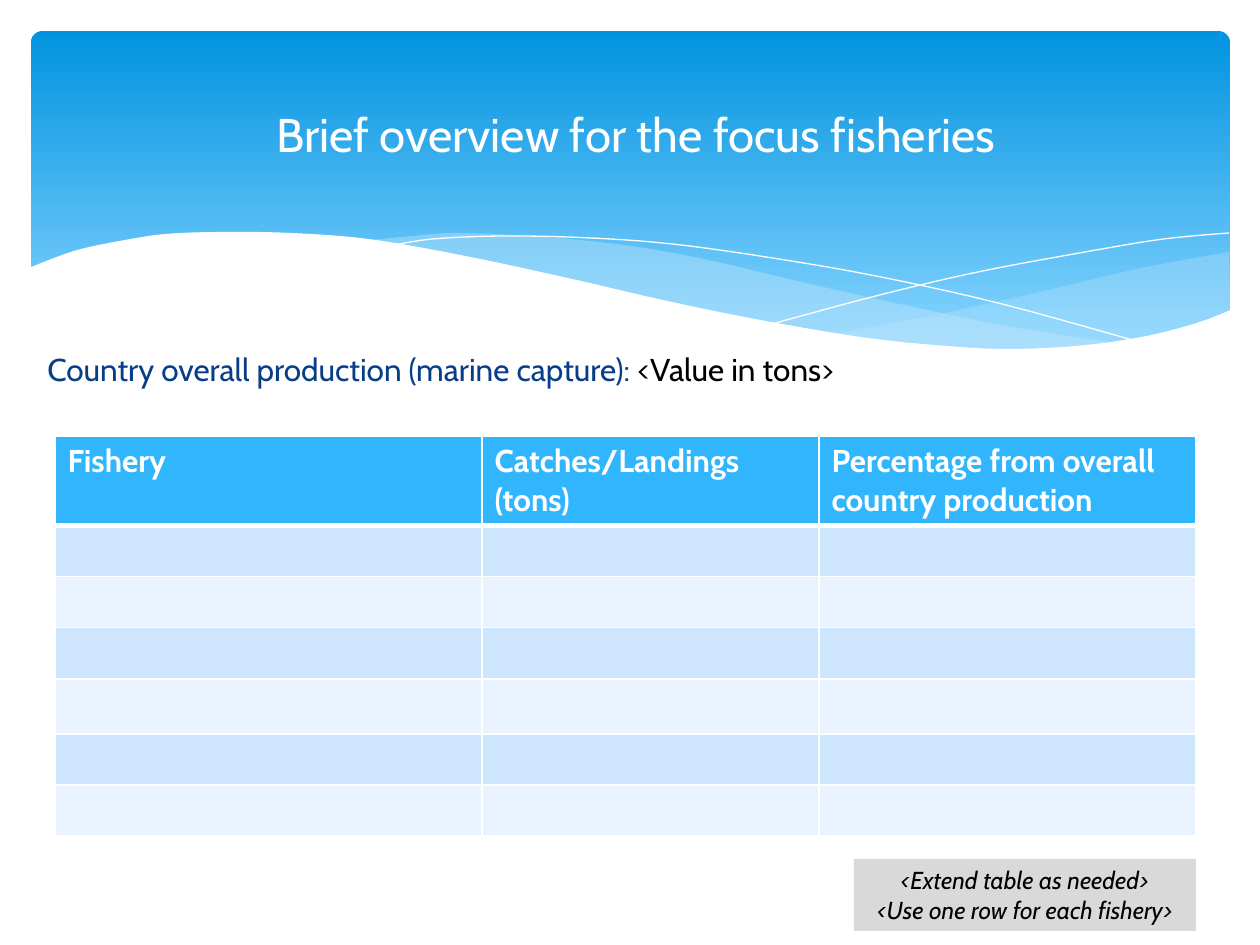
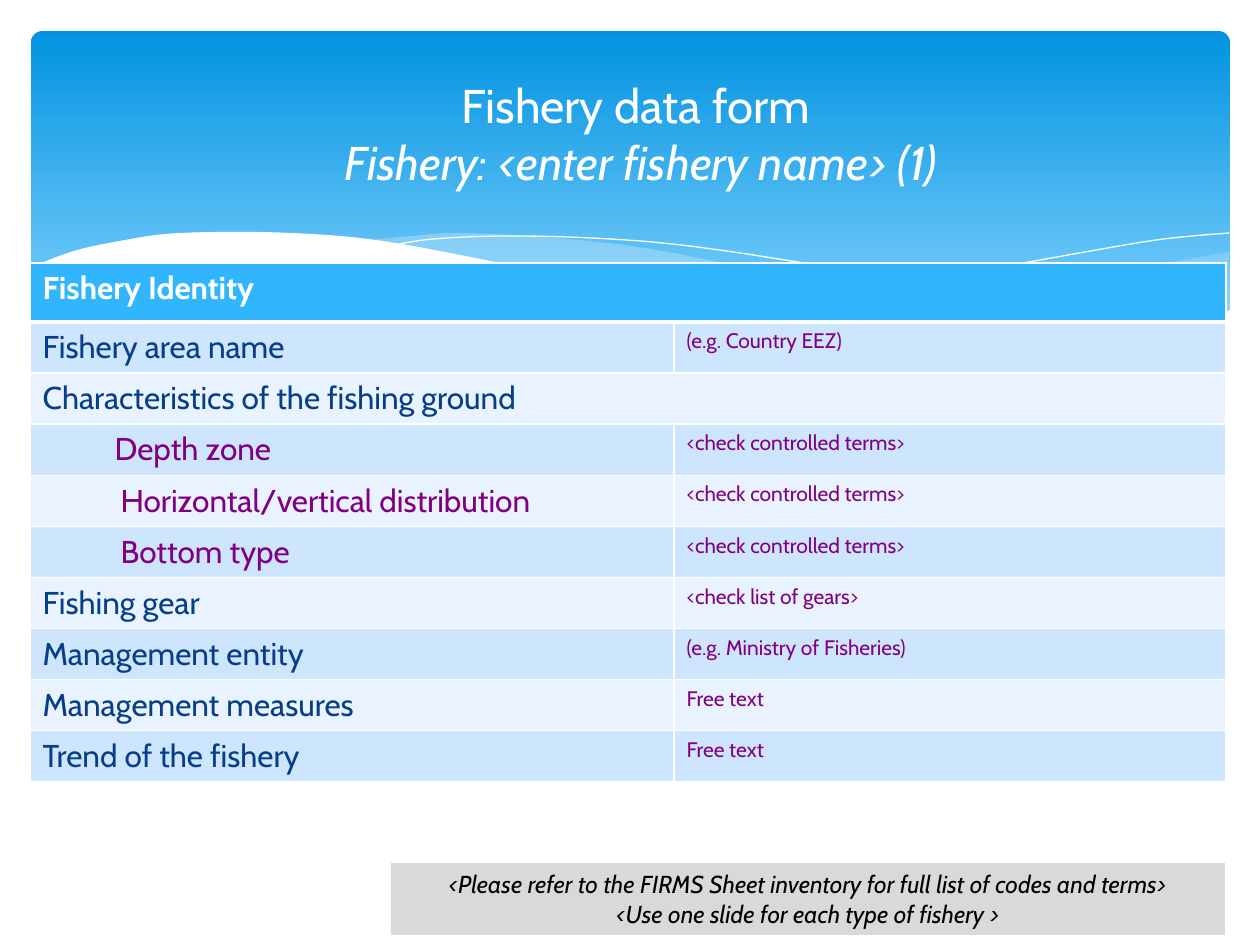
from lxml import etree
from pptx import Presentation
from pptx.dml.color import RGBColor
from pptx.enum.shapes import MSO_SHAPE
from pptx.enum.text import MSO_ANCHOR, MSO_AUTO_SIZE, PP_ALIGN
from pptx.oxml.ns import qn
from pptx.util import Inches, Pt

ROUNDED, RECTANGLE = MSO_SHAPE.ROUNDED_RECTANGLE, MSO_SHAPE.RECTANGLE
LEFT, CENTER = PP_ALIGN.LEFT, PP_ALIGN.CENTER
TOP, MIDDLE = MSO_ANCHOR.TOP, MSO_ANCHOR.MIDDLE
NO_FIT = MSO_AUTO_SIZE.NONE
PX = Inches(1) / 126
TITLE_ONLY = 5

THEME = {
    "font": "Cabin",
    "colors": {
        "white": "FFFFFF", "black": "000000", "navy": "073E87", "purple": "800080",
        "sky_top": "0293E0", "sky_bottom": "83D3FE", "wash": "C6E7FC",
        "header": "31B6FD", "band_dark": "CEE5FE", "band_light": "E8F3FF",
        "note": "D9D9D9",
    },
    # name: (colour, font settings)
    "text": {
        "title": ("white", {"size": Pt(27)}),
        "title_italic": ("white", {"size": Pt(27), "italic": True}),
        "label": ("navy", {"size": Pt(18)}),
        "value": ("black", {"size": Pt(18)}),
        "sub_label": ("purple", {"size": Pt(18)}),
        "hint": ("purple", {"size": Pt(12)}),
        "header": ("white", {"size": Pt(18), "bold": True}),
        "note": ("black", {"size": Pt(14), "italic": True}),
    },
}

# Shared band: every shape is a list of edges, each edge a smooth run of points
BAND_BOX = (31, 31, 1199, 340)
TITLE_BOX = (35, 47, 1201, 173)
RIGHT_WASH = [
    [(1229, 252), (1178, 261), (1123, 272), (1048, 290), (949, 312), (833, 334)],
    [(833, 334), (922, 345), (1012, 350), (1087, 346), (1150, 336), (1196, 324),
     (1230, 311)],
]
MIDDLE_WASH = [
    [(360, 241), (413, 236), (455, 233), (529, 236), (616, 244), (699, 258),
     (793, 280), (890, 302), (1017, 328), (1125, 344)],
    [(1125, 344), (1068, 349), (1003, 350), (927, 346), (838, 335), (736, 318),
     (619, 292), (538, 272), (456, 256), (360, 241)],
]
FALLING_LINE = [
    [(389, 246), (433, 239), (505, 236), (591, 238), (672, 244), (766, 257),
     (876, 276), (1002, 304), (1143, 343)],
]
RISING_LINE = [
    [(772, 324), (876, 296), (978, 272), (1091, 251), (1164, 239), (1229, 233)],
]
WHITE_WAVE = [
    [(29, 268), (74, 251), (120, 241), (166, 234), (223, 232), (290, 233),
     (368, 239), (460, 255), (563, 277), (667, 301), (760, 320), (867, 338),
     (959, 347), (1019, 349), (1087, 345), (1147, 336), (1197, 323), (1231, 310)],
    [(1231, 310), (1231, 415)],
    [(1231, 415), (29, 415)],
]

# Slide content
BREAK = ("\n", None)
OVERVIEW = {
    "title": [("Brief overview for the focus fisheries", "title")],
    "production_box": (35, 344, 1181, 165),
    "production": [("Country overall production (marine capture): ", "label"),
                   ("<Value in tons>", "value")],
    "note_box": (854, 859, 342, 72),
    "note": ["<Extend table as needed>", "<Use one row for each fishery>"],
    "table": {
        "corner": (55, 436),
        "columns": [427, 337, 377],
        "heights": [87, 50, 50, 50, 55, 50, 50],
        "rows": [["Fishery", "Catches/Landings (tons)",
                  "Percentage from overall country production"]]
                + [["", "", ""]] * 6,
    },
}
CHECK_TERMS = "<check controlled terms>"
DATA_FORM = {
    "title": [("Fishery data form", "title"), BREAK,
              (" Fishery: <enter fishery name> (1)", "title_italic")],
    "note_box": (391, 863, 834, 72),
    "note": ["<Please refer to the FIRMS Sheet inventory for full list of codes and terms>",
             "<Use one slide for each type of fishery >"],
    "table": {
        "corner": (30, 263),
        "columns": [644, 552],
        "heights": [59] + [51] * 9,
        # a row with one entry spans the table
        "rows": [
            ["Fishery Identity"],
            ["Fishery area name", "(e.g. Country EEZ)"],
            ["Characteristics of the fishing ground"],
            ["Depth zone", CHECK_TERMS],
            ["Horizontal/vertical distribution", CHECK_TERMS],
            ["Bottom type", CHECK_TERMS],
            ["Fishing gear", "<check list of gears>"],
            ["Management entity", "(e.g. Ministry of Fisheries)"],
            ["Management measures", "Free text"],
            ["Trend of the fishery", "Free text"],
        ],
        "indents": {3: 72, 4: 78, 5: 78},
    },
}


def emu(length):
    return round(length * PX)


def place(box):
    return [emu(length) for length in box]


def color(name):
    return RGBColor.from_string(THEME["colors"][name])


def paint(target, name):
    target.fill.solid()
    target.fill.fore_color.rgb = color(name)


def write(frame, paragraphs, align=LEFT, anchor=TOP):
    """Fill a text frame with paragraphs made of (text, style) spans."""
    settings = {"word_wrap": True, "auto_size": NO_FIT, "vertical_anchor": anchor}
    for key, value in settings.items():
        setattr(frame, key, value)
    for index, spans in enumerate(paragraphs):
        para = frame.add_paragraph() if index else frame.paragraphs[0]
        para.alignment = align
        for text, style in spans:
            if style is None:
                para.add_line_break()
                continue
            span = para.add_run()
            span.text = text
            color_name, settings = THEME["text"][style]
            span.font.color.rgb = color(color_name)
            for key, value in {"name": THEME["font"], **settings}.items():
                setattr(span.font, key, value)


def smooth(points, steps=5):
    """Catmull-Rom curve through the points."""
    padded = [points[0], *points, points[-1]]
    curve = [points[0]]
    for a, b, c, d in zip(padded, padded[1:], padded[2:], padded[3:]):
        for step in range(1, steps + 1):
            t = step / steps
            curve.append(tuple(
                (2 * q + (r - p) * t + (2 * p - 5 * q + 4 * r - s) * t ** 2
                 + (3 * q - p - 3 * r + s) * t ** 3) / 2
                for p, q, r, s in zip(a, b, c, d)))
    return curve


def add_outline(page, edges, closed):
    points = [place(point) for edge in edges for point in smooth(edge)]
    builder = page.shapes.build_freeform(*points[0])
    builder.add_line_segments(points[1:], close=closed)
    shape = builder.convert_to_shape()
    shape.shadow.inherit = False
    return shape


def add_area(page, edges, color_name, opacity=100):
    shape = add_outline(page, edges, True)
    shape.line.fill.background()
    paint(shape, color_name)
    if opacity < 100:
        swatch = shape.element.spPr.find(f"{qn('a:solidFill')}/{qn('a:srgbClr')}")
        etree.SubElement(swatch, qn("a:alpha"), val=str(opacity * 1000))
    return shape


def add_hairline(page, edges):
    shape = add_outline(page, edges, False)
    shape.fill.background()
    shape.line.color.rgb = color("white")
    shape.line.width = 0
    return shape


def add_gradient_band(page):
    band = page.shapes.add_shape(ROUNDED, *place(BAND_BOX))
    band.adjustments[0] = 0.034
    band.shadow.inherit = False
    band.line.fill.background()
    band.fill.gradient()
    band.fill.gradient_angle = 270
    stops = [(0, "sky_top"), (0.9, "sky_bottom")]
    for stop, (position, name) in zip(band.fill.gradient_stops, stops):
        stop.position = position
        stop.color.rgb = color(name)
    return band


def move_band_to_layout(page):
    """Draw the wave band and hand it to the layout, behind its title."""
    parts = [
        add_gradient_band(page),
        add_area(page, RIGHT_WASH, "wash", 29),
        add_area(page, MIDDLE_WASH, "wash", 40),
        add_hairline(page, FALLING_LINE),
        add_hairline(page, RISING_LINE),
        add_area(page, WHITE_WAVE, "white"),
    ]
    layout_title = page.slide_layout.placeholders[0].element
    for number, part in enumerate(parts, start=20):
        part.element.nvSpPr.cNvPr.set("id", str(number))
        layout_title.addprevious(part.element)


def add_title(page, spans):
    title = page.shapes.title
    title.left, title.top, title.width, title.height = place(TITLE_BOX)
    write(title.text_frame, [spans], CENTER, MIDDLE)


def add_note(page, box, lines):
    note = page.shapes.add_shape(RECTANGLE, *place(box))
    note.shadow.inherit = False
    note.line.fill.background()
    paint(note, "note")
    write(note.text_frame, [[(line, "note")] for line in lines], CENTER)


def set_borders(cell, widths):
    properties = cell._tc.get_or_add_tcPr()
    for index, (side, width) in enumerate(widths.items()):
        line = etree.Element(qn(f"a:ln{side}"), w=str(Pt(width)))
        fill = etree.SubElement(line, qn("a:solidFill"))
        etree.SubElement(fill, qn("a:srgbClr"), val=THEME["colors"]["white"])
        properties.insert(index, line)


def add_fishery_table(page, spec):
    rows, columns, heights = spec["rows"], spec["columns"], spec["heights"]
    box = (*spec["corner"], sum(columns), sum(heights))
    table = page.shapes.add_table(len(rows), len(columns), *place(box)).table
    table.first_row = table.horz_banding = False
    for column, width in zip(table.columns, columns):
        column.width = emu(width)
    for number, (row, height, texts) in enumerate(zip(table.rows, heights, rows)):
        row.height = emu(height)
        band = "header" if number == 0 else "band_dark" if number % 2 else "band_light"
        indent = spec.get("indents", {}).get(number, 0)
        for cell in row.cells:
            paint(cell, band)
            set_borders(cell, {"L": 1, "R": 1, "T": 3 if number == 1 else 1,
                               "B": 3 if number == 0 else 1})
        if len(texts) == 1:
            row.cells[0].merge(row.cells[len(columns) - 1])
        for position, text in enumerate(texts):
            if not text:
                continue
            cell = row.cells[position]
            style = "header" if number == 0 else "hint" if position else "label"
            if indent and position == 0:
                style = "sub_label"
                cell.margin_left += emu(indent)
            span = cell.text_frame.paragraphs[0].add_run()
            span.text = text
            color_name, settings = THEME["text"][style]
            span.font.color.rgb = color(color_name)
            for key, value in {"name": THEME["font"], **settings}.items():
                setattr(span.font, key, value)


def main():
    deck = Presentation()
    deck.slide_width, deck.slide_height = Inches(10), Inches(7.5)
    layout = deck.slide_layouts[TITLE_ONLY]
    for number, content in enumerate([OVERVIEW, DATA_FORM]):
        page = deck.slides.add_slide(layout)
        if number == 0:
            move_band_to_layout(page)
        add_title(page, content["title"])
        if "production" in content:
            box = page.shapes.add_textbox(*place(content["production_box"]))
            write(box.text_frame, [content["production"]])
        add_note(page, content["note_box"], content["note"])
        add_fishery_table(page, content["table"])
    deck.save("out.pptx")


if __name__ == "__main__":
    main()
